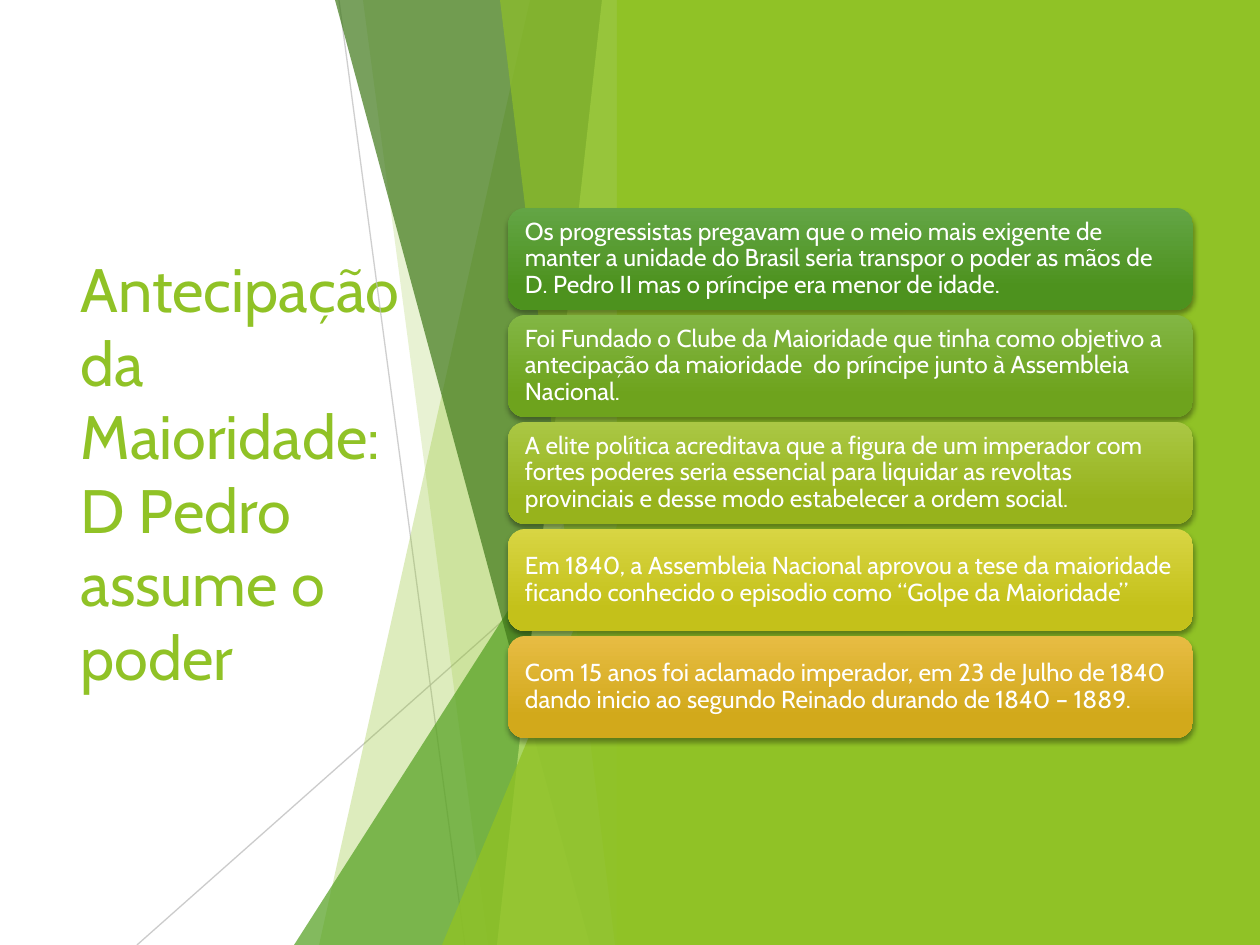
import pptx
import pptx.util
import pptx.dml.color
import pptx.enum.shapes
import pptx.enum.text
import pptx.oxml.ns
import lxml.etree

SHAPES = pptx.enum.shapes.MSO_SHAPE
MIDDLE = pptx.enum.text.MSO_ANCHOR.MIDDLE
LEFT = pptx.enum.text.PP_ALIGN.LEFT
FONT = "Cabin"
EMU_PER_PX = 914400 / 126
WIDTH, HEIGHT = 1260, 945

COLORS = {
    "lime": "90C226", "green": "54A021", "forest": "3F7819",
    "pale": "C0E474", "hairline": "BFBFBF", "text": "FFFFFF",
    "shadow": "000000",
}

TITLE = "Antecipação da Maioridade: D Pedro assume o poder"
# text, gradient top, gradient bottom
EVENTS = [
    ("Os progressistas pregavam que o meio mais exigente de manter a unidade do "
     "Brasil seria transpor o poder as mãos de D. Pedro II mas o príncipe era "
     "menor de idade.", "63A545", "4D921E"),
    ("Foi Fundado o Clube da Maioridade que tinha como objetivo a antecipação da "
     "maioridade  do príncipe junto à Assembleia Nacional.", "82B644", "6EA31D"),
    ("A elite política acreditava que a figura de um imperador com fortes poderes "
     "seria essencial para liquidar as revoltas provinciais e desse modo "
     "estabelecer a ordem social.", "AAC744", "97B31C"),
    ("Em 1840, a Assembleia Nacional aprovou a tese da maioridade ficando "
     "conhecido o episodio como “Golpe da Maioridade”", "D8D543", "C4C11A"),
    ("Com 15 anos foi aclamado imperador, em 23 de Julho de 1840 dando inicio ao "
     "segundo Reinado durando de 1840 – 1889.", "E7BC43", "D2A91B"),
]

# from x, from y, to x, to y, opacity in percent
HAIRLINES = [(339, 0, 465, 945, 75), (630, 508, 137, 945, 80)]
# Every facet ends at the same right edge.
FACET_RIGHT = 630
# kind, left x at the top (band) or top y (triangle), left x at the bottom,
# colour, opacity in percent
FACETS = [
    ("band", 530, 319, "lime", 30),
    ("band", 363, 488, "lime", 20),
    ("triangle", 420, 294, "green", 72),
    ("band", 335, 590, "forest", 70),
    ("band", 602, 497, "pale", 70),
    ("band", 500, 615, "lime", 65),
    ("triangle", 495, 442, "lime", 80),
]
PANEL_LEFT = 617
CARD_LEFT, CARD_TOP, CARD_WIDTH, CARD_HEIGHT, CARD_PITCH = 508, 208, 685, 102, 107
CARD_INSET = 12


def px(length):
    return pptx.util.Emu(round(length * EMU_PER_PX))


def rgb(value):
    return pptx.dml.color.RGBColor.from_string(value)


def add_child(parent, tag, **attributes):
    child = lxml.etree.SubElement(parent, pptx.oxml.ns.qn(tag))
    for key, value in attributes.items():
        child.set(key, str(value))
    return child


def set_opacity(shape, percent):
    color = next(shape._element.spPr.iter(pptx.oxml.ns.qn("a:srgbClr")))
    add_child(color, "a:alpha", val=percent * 1000)


def paint(shape, color):
    shape.fill.solid()
    shape.fill.fore_color.rgb = rgb(color)
    shape.line.fill.background()
    shape.shadow.inherit = False


def add_hairline(slide, x1, y1, x2, y2, opacity):
    hairline = slide.shapes.add_connector(
        pptx.enum.shapes.MSO_CONNECTOR.STRAIGHT, px(x1), px(y1), px(x2), px(y2))
    hairline.line.width = pptx.util.Pt(0.75)
    hairline.line.color.rgb = rgb(COLORS["hairline"])
    set_opacity(hairline, opacity)
    add_child(hairline._element.spPr, "a:effectLst")


def add_facet(slide, kind, start, bottom_left, color, opacity):
    if kind == "triangle":
        facet = slide.shapes.add_shape(
            SHAPES.ISOSCELES_TRIANGLE, px(bottom_left), px(start),
            px(FACET_RIGHT - bottom_left), px(HEIGHT - start))
        facet.adjustments[0] = 1
    else:
        outline = slide.shapes.build_freeform(px(start), px(0))
        corners = [(FACET_RIGHT, 0), (FACET_RIGHT, HEIGHT), (bottom_left, HEIGHT)]
        outline.add_line_segments([(px(x), px(y)) for x, y in corners], close=True)
        facet = outline.convert_to_shape()
    paint(facet, COLORS[color])
    set_opacity(facet, opacity)


def write(shape, text, size, color):
    frame = shape.text_frame
    frame.text = text
    frame.word_wrap = True
    frame.auto_size = pptx.enum.text.MSO_AUTO_SIZE.NONE
    frame.vertical_anchor = MIDDLE
    paragraph = frame.paragraphs[0]
    paragraph.alignment = LEFT
    paragraph.font.name = FONT
    paragraph.font.size = pptx.util.Pt(size)
    paragraph.font.color.rgb = rgb(color)
    return frame


def add_card(slide, row, text, top_color, bottom_color):
    card = slide.shapes.add_shape(
        SHAPES.ROUNDED_RECTANGLE, px(CARD_LEFT), px(CARD_TOP + row * CARD_PITCH),
        px(CARD_WIDTH), px(CARD_HEIGHT))
    card.fill.gradient()
    card.fill.gradient_angle = 270
    stops = zip(card.fill.gradient_stops, (0, 0.78), (top_color, bottom_color))
    for stop, position, color in stops:
        stop.position = position
        stop.color.rgb = rgb(color)
    card.line.fill.background()

    card.shadow.inherit = False
    effects = card._element.spPr.find(pptx.oxml.ns.qn("a:effectLst"))
    shadow = add_child(effects, "a:outerShdw", blurRad=pptx.util.Pt(3),
                       dist=pptx.util.Pt(2), dir=90 * 60000, rotWithShape=0)
    shadow_color = add_child(shadow, "a:srgbClr", val=COLORS["shadow"])
    add_child(shadow_color, "a:alpha", val=35000)

    frame = write(card, text, 14, COLORS["text"])
    frame.margin_left = frame.margin_right = px(CARD_INSET)
    frame.margin_top = frame.margin_bottom = px(CARD_INSET)
    frame.paragraphs[0].line_spacing = 0.9


def main():
    deck = pptx.Presentation()
    deck.slide_width, deck.slide_height = px(WIDTH), px(HEIGHT)
    slide = deck.slides.add_slide(deck.slide_layouts[5])

    title = slide.shapes.title
    title.left, title.top, title.width, title.height = map(px, (68, 190, 367, 564))
    write(title, TITLE, 35, COLORS["lime"])

    for hairline in HAIRLINES:
        add_hairline(slide, *hairline)
    for facet in FACETS:
        add_facet(slide, *facet)

    panel = slide.shapes.add_shape(
        SHAPES.RECTANGLE, px(PANEL_LEFT), px(0), px(WIDTH - PANEL_LEFT), px(HEIGHT))
    paint(panel, COLORS["lime"])

    for row, event in enumerate(EVENTS):
        add_card(slide, row, *event)

    deck.save("out.pptx")


if __name__ == "__main__":
    main()
